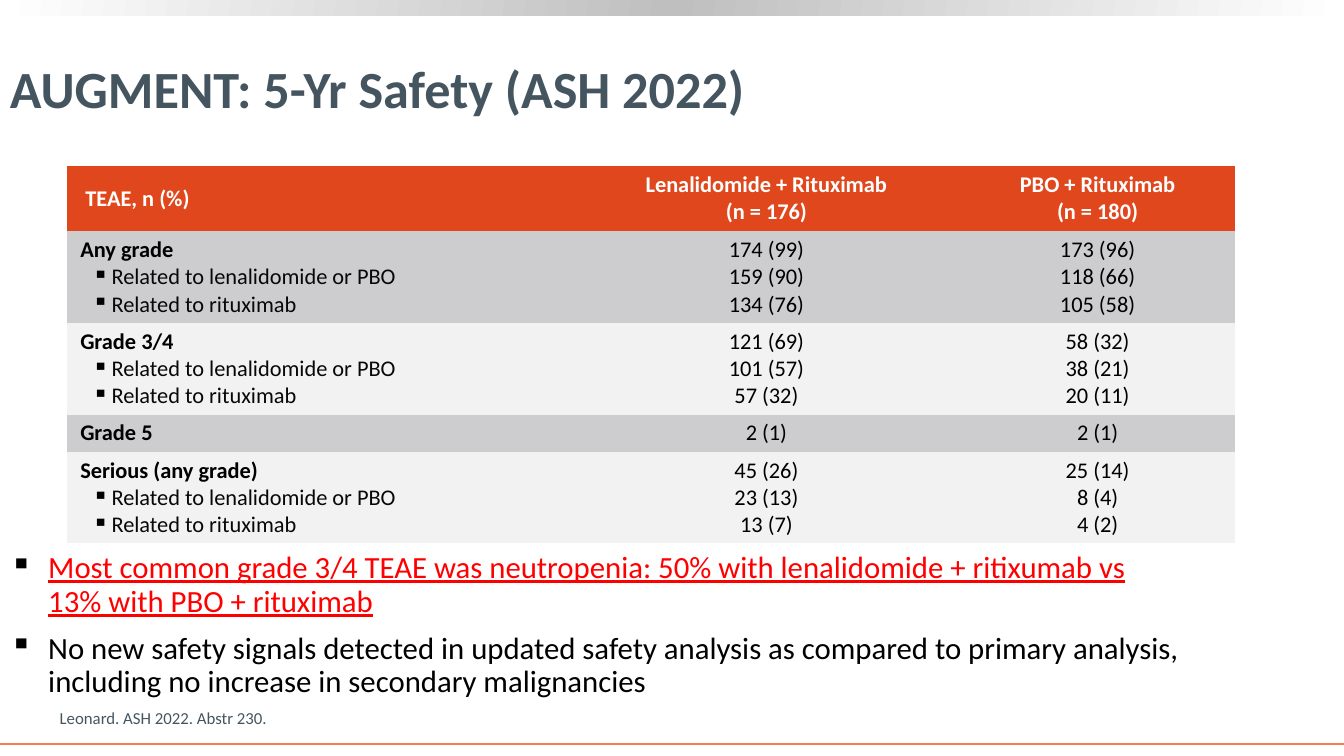
from copy import deepcopy
from dataclasses import dataclass

from lxml import etree
from pptx import Presentation
from pptx.dml.color import RGBColor
from pptx.enum.shapes import MSO_CONNECTOR, MSO_SHAPE
from pptx.enum.text import MSO_ANCHOR, PP_ALIGN
from pptx.oxml.ns import qn
from pptx.util import Emu, Inches, Pt

LEFT, CENTER = PP_ALIGN.LEFT, PP_ALIGN.CENTER
TOP, MIDDLE, BOTTOM = MSO_ANCHOR.TOP, MSO_ANCHOR.MIDDLE, MSO_ANCHOR.BOTTOM
RECTANGLE, STRAIGHT = MSO_SHAPE.RECTANGLE, MSO_CONNECTOR.STRAIGHT

SLIDE_W, SLIDE_H = Inches(13.33), Inches(7.5)
FONT = "Calibri"
BLACK, WHITE, SLATE, RED = "000000", "FFFFFF", "455560", "FF0000"
HEADER_FILL, BAND_FILLS = "E1471D", ("CDCDCF", "F2F2F2")
NO_GRID_STYLE = "{2D5ABB26-0587-4C30-8999-92F81FD0307C}"
COLUMN_WIDTHS = (5.01, 3.85, 2.72)
HEADER_H, LINE_H, CELL_PAD = 0.65, 0.27, 0.1


@dataclass
class Box:
    """A rectangle given as shares of the slide's width and height."""
    x: float
    y: float
    w: float
    h: float

    def emu(self) -> tuple[Emu, Emu, Emu, Emu]:
        """Return left, top, width and height as lengths."""
        return (Emu(int(self.x * SLIDE_W)), Emu(int(self.y * SLIDE_H)),
                Emu(int(self.w * SLIDE_W)), Emu(int(self.h * SLIDE_H)))


@dataclass
class Para:
    """One paragraph and its look; a newline in the text is a line break."""
    text: str
    size: float
    color: str = BLACK
    bold: bool = False
    underline: bool = False
    align: PP_ALIGN = LEFT
    bullet: bool = False
    margin: float = 0
    hang: float = 0
    before: float = 0
    after: float = 0
    spacing: float = 1.0


@dataclass
class EventGroup:
    """A table row: its heading and the counts per arm, one per line."""
    heading: str
    lenalidomide: tuple[str, ...]
    placebo: tuple[str, ...]


TITLE_BOX = Box(0, 0.035, 0.892, 0.161)
TABLE_BOX = Box(0.05, 0.219, 0.869, 0.5)
BODY_BOX = Box(0, 0.724, 0.893, 0.175)
SOURCE_BOX = Box(0.037, 0.929, 0.644, 0.04)
BAND_BOX = Box(0, 0, 1, 0.021)
FOOT_LINE_Y = 0.984

HEADERS = ("TEAE, n (%)", "Lenalidomide + Rituximab\n(n = 176)", "PBO + Rituximab\n(n = 180)")
RELATED = ("Related to lenalidomide or PBO", "Related to rituximab")
GROUPS = (
    EventGroup("Any grade", ("174 (99)", "159 (90)", "134 (76)"), ("173 (96)", "118 (66)", "105 (58)")),
    EventGroup("Grade 3/4", ("121 (69)", "101 (57)", "57 (32)"), ("58 (32)", "38 (21)", "20 (11)")),
    EventGroup("Grade 5", ("2 (1)",), ("2 (1)",)),
    EventGroup("Serious (any grade)", ("45 (26)", "23 (13)", "13 (7)"), ("25 (14)", "8 (4)", "4 (2)")),
)
FINDINGS = (
    ("Most common grade 3/4 TEAE was neutropenia: 50% with lenalidomide + ritixumab vs\n"
     "13% with PBO + rituximab", RED, True, 0),
    ("No new safety signals detected in updated safety analysis as compared to primary analysis, "
     "including no increase in secondary malignancies", BLACK, False, 7),
)


def rgb(color: str) -> RGBColor:
    """Turn a hex string into a colour."""
    return RGBColor.from_string(color)


def write(tf, paras: list[Para]) -> None:
    """Fill a text frame with paragraphs."""
    for i, para in enumerate(paras):
        p = tf.add_paragraph() if i else tf.paragraphs[0]
        p.alignment, p.line_spacing = para.align, para.spacing
        p.space_before, p.space_after = Pt(para.before), Pt(para.after)
        pPr = p._p.get_or_add_pPr()
        pPr.set("marL", str(Inches(para.margin)))
        pPr.set("indent", str(-Inches(para.hang)))
        if para.bullet:
            clr = etree.SubElement(pPr, qn("a:buClr"))
            etree.SubElement(clr, qn("a:srgbClr"), val=BLACK)
            etree.SubElement(pPr, qn("a:buChar"), char="▪")
        for n, line in enumerate(para.text.split("\n")):
            if n:
                p.add_line_break()
            r = p.add_run()
            r.text = line
            r.font.name, r.font.size = FONT, Pt(para.size)
            r.font.bold, r.font.underline = para.bold, para.underline
            r.font.color.rgb = rgb(para.color)


def add_text(s, box: Box, paras: list[Para], anchor: MSO_ANCHOR = TOP) -> None:
    """Add a wrapping text box."""
    tf = s.shapes.add_textbox(*box.emu()).text_frame
    tf.word_wrap, tf.vertical_anchor = True, anchor
    write(tf, paras)


def add_frame(s) -> None:
    """Add the gradient band on top and the line at the foot."""
    sp = s.shapes.add_shape(RECTANGLE, *BAND_BOX.emu())
    sp.shadow.inherit = False
    sp.line.fill.background()
    sp.fill.gradient()
    sp.fill.gradient_angle = 170
    gs_lst = sp._element.spPr.find(qn("a:gradFill")).find(qn("a:gsLst"))
    gs_lst.insert(1, deepcopy(gs_lst[0]))
    for stop, color, place in zip(sp.fill.gradient_stops, (WHITE, "BFBFBF", WHITE), (0, 0.5, 1)):
        stop.color.rgb, stop.position = rgb(color), place
    y = int(FOOT_LINE_Y * SLIDE_H)
    line = s.shapes.add_connector(STRAIGHT, 0, y, SLIDE_W, y)
    line.line.color.rgb, line.line.width = rgb("F47D55"), Pt(1.5)
    etree.SubElement(line._element.spPr, qn("a:effectLst"))


def fill_cell(cell, color: str, paras: list[Para], anchor: MSO_ANCHOR = TOP) -> None:
    """Set a cell's fill, insets and text."""
    cell.fill.solid()
    cell.fill.fore_color.rgb = rgb(color)
    cell.margin_left = cell.margin_right = Inches(0.13)
    cell.margin_top = cell.margin_bottom = Inches(CELL_PAD / 2)
    cell.vertical_anchor = anchor
    write(cell.text_frame, paras)


def add_safety_table(s) -> None:
    """Add the table of adverse events."""
    frame = s.shapes.add_table(len(GROUPS) + 1, len(HEADERS), *TABLE_BOX.emu())
    table = frame.table
    table.first_row = table.horz_banding = False
    table._tbl.tblPr.find(qn("a:tableStyleId")).text = NO_GRID_STYLE
    for column, width in zip(table.columns, COLUMN_WIDTHS):
        column.width = Inches(width)
    table.rows[0].height = Inches(HEADER_H)
    for c, text in enumerate(HEADERS):
        look = dict(align=CENTER, before=2, after=2) if c else dict(margin=0.05, before=1.4)
        fill_cell(table.cell(0, c), HEADER_FILL, [Para(text, 16, WHITE, True, **look)], MIDDLE)
    for i, group in enumerate(GROUPS):
        lines = len(group.placebo)
        table.rows[i + 1].height = Inches(CELL_PAD + LINE_H * lines)
        labels = [Para(group.heading, 16, bold=True)]
        labels += [Para(t, 16, "07080A", bullet=True, margin=0.31, hang=0.19)
                   for t in RELATED[:lines - 1]]
        counts = [[Para(t, 16, align=CENTER) for t in arm]
                  for arm in (group.lenalidomide, group.placebo)]
        for c, paras in enumerate([labels, *counts]):
            fill_cell(table.cell(i + 1, c), BAND_FILLS[i % 2], paras)


def main() -> None:
    """Build and save the slide."""
    prs = Presentation()
    prs.slide_width, prs.slide_height = SLIDE_W, SLIDE_H
    s = prs.slides.add_slide(prs.slide_layouts[6])
    add_frame(s)
    add_text(s, BODY_BOX, [
        Para(text, 22, color, underline=underline, bullet=True, margin=0.38, hang=0.38,
             before=10, after=after, spacing=0.9)
        for text, color, underline, after in FINDINGS])
    add_text(s, TITLE_BOX, [Para("AUGMENT: 5-Yr Safety (ASH 2022)", 37.3, SLATE, True)], MIDDLE)
    add_safety_table(s)
    add_text(s, SOURCE_BOX, [Para("Leonard. ASH 2022. Abstr 230.", 12, SLATE)], BOTTOM)
    prs.save("out.pptx")


if __name__ == "__main__":
    main()
